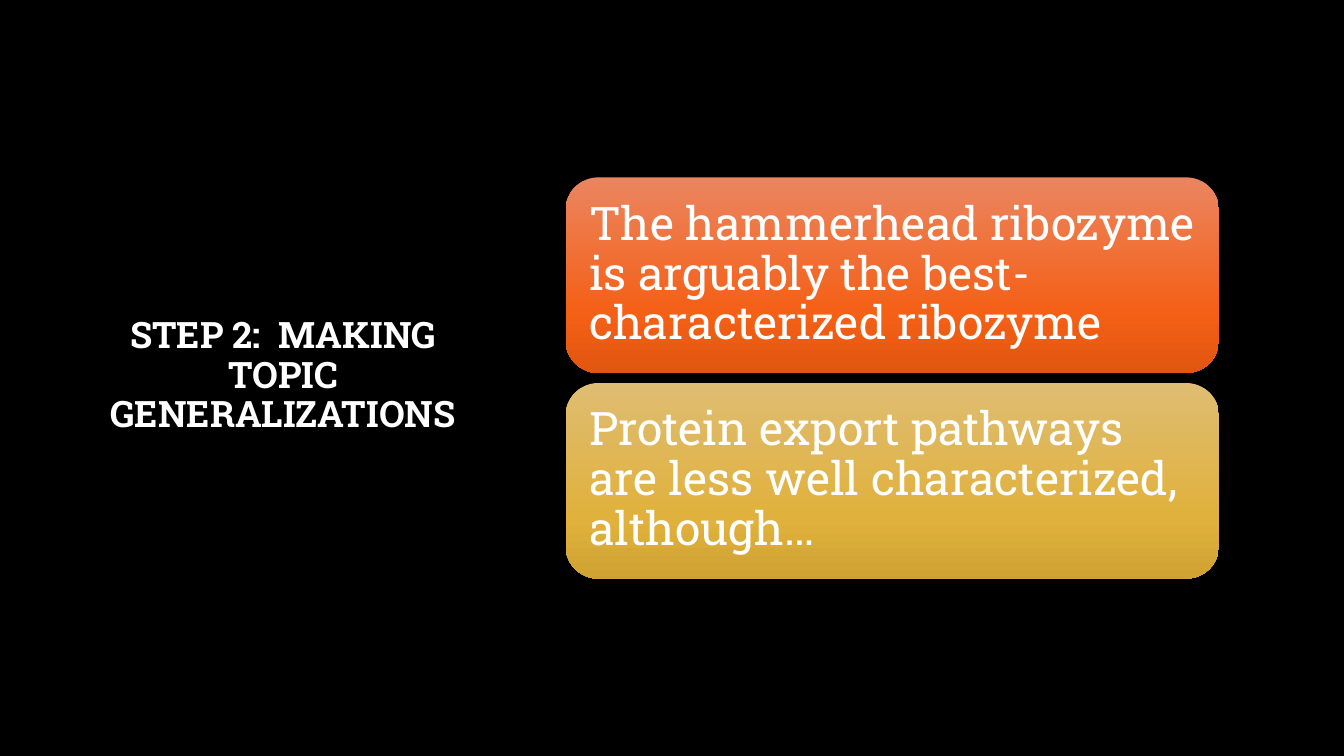
from copy import deepcopy

from pptx import Presentation
from pptx.dml.color import RGBColor
from pptx.enum.shapes import MSO_SHAPE
from pptx.enum.text import MSO_ANCHOR, PP_ALIGN
from pptx.oxml.ns import qn
from pptx.util import Inches, Pt

ROUNDED = MSO_SHAPE.ROUNDED_RECTANGLE
MIDDLE = MSO_ANCHOR.MIDDLE
LEFT, CENTER = PP_ALIGN.LEFT, PP_ALIGN.CENTER

FONT = "Roboto Slab"
COLORS = {
    "background": "000000",
    "text": "FFFFFF",
    "orange": ("EB8560", "F46016", "E15610"),
    "gold": ("DFBD72", "E0B13C", "CFA233"),
}
STOP_POSITIONS = (0, 0.69, 1)

CARD_LEFT, CARD_TOP = 5.61, 1.76
CARD_WIDTH, CARD_HEIGHT = 6.48, 1.94
CARD_PITCH = 2.04
CARDS = [
    ("The hammerhead ribozyme is arguably the best-characterized ribozyme", "orange"),
    ("Protein export pathways are less well characterized, although…", "gold"),
]


class SlideBuilder:
    def __init__(self, presentation):
        self.slide = presentation.slides.add_slide(presentation.slide_layouts[6])
        fill = self.slide.background.fill
        fill.solid()
        fill.fore_color.rgb = RGBColor.from_string(COLORS["background"])

    def set_text(self, shape, text, size, align, bold=False):
        frame = shape.text_frame
        frame.word_wrap = True
        frame.vertical_anchor = MIDDLE
        paragraph = frame.paragraphs[0]
        paragraph.alignment = align
        paragraph.line_spacing = 0.9
        run = paragraph.add_run()
        run.text = text
        run.font.name = FONT
        run.font.size = Pt(size)
        run.font.bold = bold
        run.font.color.rgb = RGBColor.from_string(COLORS["text"])

    def title(self, text, left, top, width, height):
        box = self.slide.shapes.add_textbox(
            Inches(left), Inches(top), Inches(width), Inches(height))
        self.set_text(box, text, 26, CENTER, bold=True)

    def gradient(self, shape, colors):
        fill = shape.fill
        fill.gradient()
        fill.gradient_angle = 270  # counter-clockwise: top to bottom
        # The default gradient has two stops; add one in between
        stop_list = shape._element.spPr.find(qn("a:gradFill")).find(qn("a:gsLst"))
        stop_list.insert(1, deepcopy(stop_list[0]))
        for stop, position, color in zip(fill.gradient_stops, STOP_POSITIONS, colors):
            stop.position = position
            stop.color.rgb = RGBColor.from_string(color)

    def card(self, text, color, left, top, width, height):
        shape = self.slide.shapes.add_shape(
            ROUNDED, Inches(left), Inches(top), Inches(width), Inches(height))
        shape.shadow.inherit = False
        shape.line.fill.background()
        self.gradient(shape, COLORS[color])
        frame = shape.text_frame
        frame.margin_left = frame.margin_right = Inches(0.14)
        frame.margin_top = frame.margin_bottom = Inches(0.14)
        self.set_text(shape, text, 33, LEFT)


def main():
    presentation = Presentation()
    presentation.slide_width = Inches(13.33)
    presentation.slide_height = Inches(7.5)
    builder = SlideBuilder(presentation)

    # Title on the left
    builder.title("STEP 2:  MAKING TOPIC GENERALIZATIONS", 0.82, 0.67, 3.98, 6.13)

    # Example cards on the right
    for index, (text, color) in enumerate(CARDS):
        builder.card(text, color, CARD_LEFT, CARD_TOP + index * CARD_PITCH,
                     CARD_WIDTH, CARD_HEIGHT)

    presentation.save("out.pptx")


if __name__ == "__main__":
    main()
